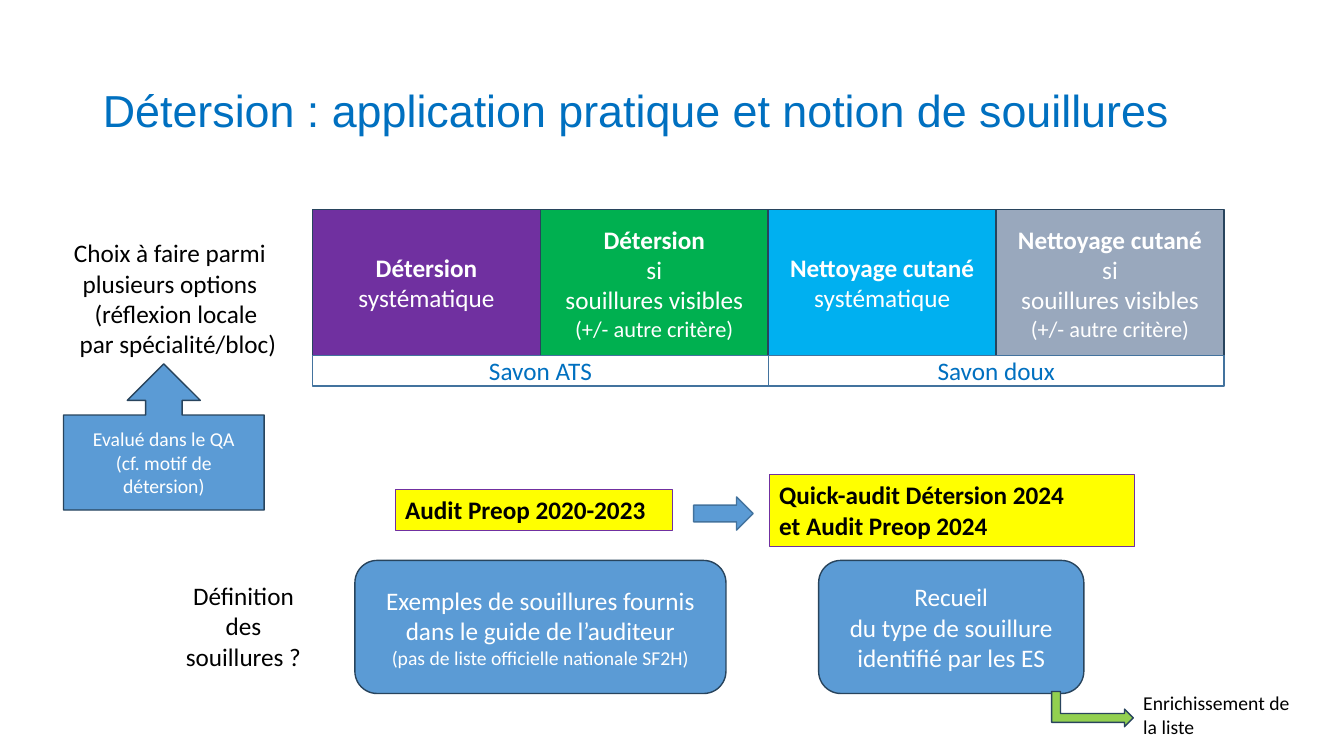
from dataclasses import dataclass
from typing import Optional

from pptx import Presentation
from pptx.dml.color import RGBColor
from pptx.enum.shapes import MSO_SHAPE
from pptx.enum.text import MSO_ANCHOR, MSO_AUTO_SIZE, PP_ALIGN
from pptx.util import Emu, Pt

EMU_PER_PX = 9144  # 100 px to the inch
BLUE, NAVY, STEEL, TITLE_BLUE = "5B9BD5", "28445D", "43739E", "0070C0"
PURPLE, YELLOW, WHITE, BLACK = "7030A0", "FFFF00", "FFFFFF", "000000"


@dataclass(frozen=True)
class Line:
    text: str
    size: int = 18
    bold: bool = False
    indent: int = 0


@dataclass(frozen=True)
class Box:
    """A text block; without a preset it has neither fill nor outline."""
    at: tuple[int, int, int, int]
    lines: tuple[Line, ...] = ()
    preset: Optional[MSO_SHAPE] = None
    fill: str = BLUE
    outline: str = NAVY
    outline_width: float = 1
    color: str = WHITE
    align: PP_ALIGN = PP_ALIGN.CENTER
    anchor: MSO_ANCHOR = MSO_ANCHOR.MIDDLE
    rotation: int = 0


def px(length: int) -> Emu:
    return Emu(length * EMU_PER_PX)


def rgb(color: str) -> RGBColor:
    return RGBColor.from_string(color)


def apply(target, values: dict) -> None:
    for name, value in values.items():
        setattr(target, name, value)


def write_line(paragraph, line: Line, color: str, align: PP_ALIGN, font: str = "Calibri") -> None:
    paragraph.alignment = align
    if line.indent:
        paragraph._p.get_or_add_pPr().set("marL", str(px(line.indent)))
    run = paragraph.add_run()
    run.text = line.text
    apply(run.font, {"name": font, "size": Pt(line.size), "bold": line.bold})
    run.font.color.rgb = rgb(color)


def draw_box(slide, box: Box) -> None:
    place = [px(length) for length in box.at]
    if box.preset is None:
        shape = slide.shapes.add_textbox(*place)
    else:
        shape = slide.shapes.add_shape(box.preset, *place)
        shape.shadow.inherit = False
        shape.fill.solid()
        shape.fill.fore_color.rgb = rgb(box.fill)
        shape.line.color.rgb = rgb(box.outline)
        shape.line.width = Pt(box.outline_width)
    shape.rotation = box.rotation
    frame = shape.text_frame
    apply(frame, {"word_wrap": True, "vertical_anchor": box.anchor})
    for index, line in enumerate(box.lines):
        paragraph = frame.add_paragraph() if index else frame.paragraphs[0]
        write_line(paragraph, line, box.color, box.align)


def draw_title(slide, text: str) -> None:
    title = slide.shapes.title
    apply(title, {"left": px(92), "top": px(40), "width": px(1150), "height": px(145)})
    frame = title.text_frame
    apply(frame, {"word_wrap": True, "auto_size": MSO_AUTO_SIZE.NONE,
                  "vertical_anchor": MSO_ANCHOR.MIDDLE})
    paragraph = frame.paragraphs[0]
    paragraph.line_spacing = 0.9
    write_line(paragraph, Line(text, 32), TITLE_BLUE, PP_ALIGN.LEFT, "Arial")


def option_boxes() -> list[Box]:
    """Four options side by side, with one soap under each pair."""
    left, top, width, height = 310, 208, 226, 145
    always = (Line("systématique"),)
    if_soiled = (Line("si"), Line("souillures visibles"), Line("(+/- autre critère)", 16))
    options = [("Détersion", always, PURPLE), ("Détersion", if_soiled, "00B050"),
               ("Nettoyage cutané", always, "00B0F0"), ("Nettoyage cutané", if_soiled, "99A8BD")]
    boxes = [Box((left + column * width, top, width, height),
                 (Line(name, bold=True), *condition), MSO_SHAPE.RECTANGLE, fill)
             for column, (name, condition, fill) in enumerate(options)]
    boxes += [Box((left + pair * 2 * width, top + height, 2 * width, 30), (Line(soap),),
                  MSO_SHAPE.RECTANGLE, WHITE, STEEL, color=TITLE_BLUE)
              for pair, soap in enumerate(("Savon ATS", "Savon doux"))]
    return boxes


def audit_label(at: tuple[int, int, int, int], *names: str) -> Box:
    return Box(at, tuple(Line(name, bold=True) for name in names), MSO_SHAPE.RECTANGLE,
               YELLOW, PURPLE, 0.75, BLACK, PP_ALIGN.LEFT, MSO_ANCHOR.TOP)


def side_note(at: tuple[int, int, int, int], *lines: Line,
              align: PP_ALIGN = PP_ALIGN.CENTER) -> Box:
    return Box(at, lines, color=BLACK, align=align, anchor=MSO_ANCHOR.TOP)


def main() -> None:
    presentation = Presentation()
    apply(presentation, {"slide_width": px(1333), "slide_height": px(750)})
    slide = presentation.slides.add_slide(presentation.slide_layouts.get_by_name("Title Only"))
    draw_title(slide, "Détersion : application pratique et notion de souillures")

    boxes = option_boxes() + [
        side_note((41, 231, 255, 131), Line("Choix à faire parmi plusieurs options"),
                  Line("(réflexion locale", indent=12), Line("par spécialité/bloc)", indent=16)),
        Box((63, 361, 199, 145),
            (Line("Evalué dans le QA", 14), Line("(cf. motif de détersion)", 14)),
            MSO_SHAPE.UP_ARROW_CALLOUT),
        audit_label((392, 486, 275, 40), "Audit Preop 2020-2023"),
        Box((688, 493, 59, 33), preset=MSO_SHAPE.RIGHT_ARROW, outline=STEEL),
        audit_label((763, 471, 362, 71), "Quick-audit Détersion 2024", "et Audit Preop 2024"),
        side_note((168, 571, 147, 101), Line("Définition des souillures ?")),
        Box((352, 556, 368, 132),
            (Line("Exemples de souillures fournis"), Line("dans le guide de l’auditeur"),
             Line("(pas de liste officielle nationale SF2H)", 14)),
            MSO_SHAPE.ROUNDED_RECTANGLE),
        Box((812, 556, 263, 132),
            (Line("Recueil"), Line("du type de souillure identifié par les ES")),
            MSO_SHAPE.ROUNDED_RECTANGLE),
        Box((1066, 663, 35, 81), preset=MSO_SHAPE.BENT_UP_ARROW, fill="92D050", rotation=90),
        side_note((1124, 681, 171, 57), Line("Enrichissement de la liste", 14),
                  align=PP_ALIGN.LEFT),
    ]
    for box in boxes:
        draw_box(slide, box)
    presentation.save("out.pptx")


if __name__ == "__main__":
    main()
